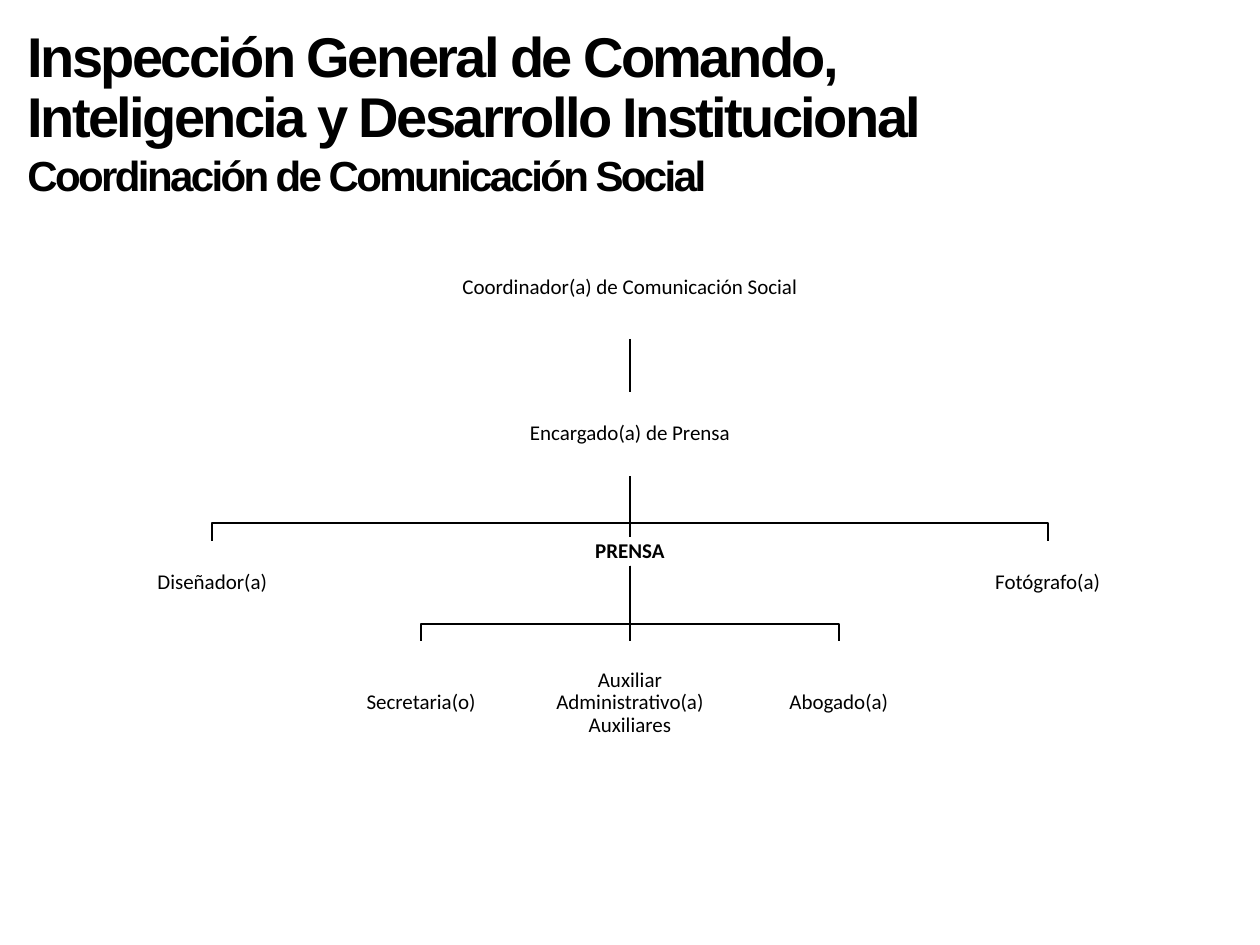
from lxml import etree
from pptx import Presentation
from pptx import util as u
from pptx.dml.color import RGBColor
from pptx.enum import shapes, text
from pptx.oxml.ns import qn

BLACK, WHITE = "000000", "FFFFFF"
TOP, BOTTOM = 0, 2
CARD_WIDTH = 1.37
ELBOW_DROP = 0.14


def color(value):
    return RGBColor.from_string(value)


def write(frame, content, size=12, font="Calibri", bold=False, align=None,
          line_spacing=0.9, tracking=None, first=True):
    para = frame.paragraphs[0] if first else frame.add_paragraph()
    para.alignment = align
    para.line_spacing = line_spacing
    span = para.add_run()
    span.text = content
    span.font.size = u.Pt(size)
    span.font.name = font
    span.font.bold = bold
    span.font.color.rgb = color(BLACK)
    if tracking is not None:
        span.font._element.set("spc", str(int(tracking * 100)))


def set_line(shape):
    shape.line.color.rgb = color(BLACK)
    shape.line.width = u.Pt(1)


def add_heading(page, left, top, width, height):
    box = page.shapes.add_textbox(*map(u.Inches, (left, top, width, height)))
    frame = box.text_frame
    frame.word_wrap = True
    frame.auto_size = text.MSO_AUTO_SIZE.SHAPE_TO_FIT_TEXT
    style = dict(font="Arial", bold=True, tracking=-1.5)
    write(frame, "Inspección General de Comando, Inteligencia y Desarrollo Institucional",
          size=32, **style)
    write(frame, "Coordinación de Comunicación Social",
          size=24, line_spacing=1.0, first=False, **style)


def add_card(page, center, top, width, height, lines, bold=False):
    card = page.shapes.add_shape(
        shapes.MSO_SHAPE.RECTANGLE,
        *map(u.Inches, (center - width / 2, top, width, height)))
    card.shadow.inherit = False
    card.fill.solid()
    card.fill.fore_color.rgb = color(WHITE)
    card.line.fill.background()
    frame = card.text_frame
    frame.word_wrap = True
    frame.vertical_anchor = text.MSO_ANCHOR.MIDDLE
    frame.margin_left = frame.margin_right = u.Inches(0.01)
    frame.margin_top = frame.margin_bottom = u.Inches(0.01)
    for index, line in enumerate(lines):
        write(frame, line, bold=bold, align=text.PP_ALIGN.CENTER, first=index == 0)
    return card


def link(page, parent, child):
    """Join bottom to top: straight when aligned, otherwise with two bends."""
    start_x, end_x = (card.left + card.width // 2 for card in (parent, child))
    start_y, end_y = parent.top + parent.height, child.top
    if start_x == end_x:
        line = page.shapes.add_connector(
            shapes.MSO_CONNECTOR.STRAIGHT, start_x, start_y, end_x, end_y)
        line.begin_connect(parent, BOTTOM)
        line.end_connect(child, TOP)
        etree.SubElement(line._element.spPr, qn("a:effectLst"))
    else:
        bend_y = end_y - u.Inches(ELBOW_DROP)
        builder = page.shapes.build_freeform(start_x, start_y)
        builder.add_line_segments(
            [(start_x, bend_y), (end_x, bend_y), (end_x, end_y)], close=False)
        line = builder.convert_to_shape()
        line.fill.background()
        line.shadow.inherit = False
    set_line(line)


def add_org_chart(page, left, top, width):
    middle = left + width / 2
    step = (width - CARD_WIDTH) / 4

    def card(column, offset, height, *lines, card_width=CARD_WIDTH, bold=False):
        return add_card(page, middle + column * step, top + offset,
                        card_width, height, lines, bold)

    coordinator = card(0, 0, 0.81, "Coordinador(a) de Comunicación Social", card_width=2.87)
    manager = card(0, 1.23, 0.67, "Encargado(a) de Prensa", card_width=2.02)
    designer = card(-2, 2.41, 0.67, "Diseñador(a)")
    press = card(0, 2.38, 0.23, "PRENSA", bold=True)
    photographer = card(2, 2.41, 0.67, "Fotógrafo(a)")
    staff = [
        card(column, 3.21, 0.98, *lines)
        for column, lines in enumerate(
            [["Secretaria(o)"], ["Auxiliar Administrativo(a)", "Auxiliares"], ["Abogado(a)"]],
            start=-1)
    ]

    reports = [(coordinator, [manager]),
               (manager, [designer, press, photographer]),
               (press, staff)]
    for parent, children in reports:
        for child in children:
            link(page, parent, child)


def main():
    deck = Presentation()
    deck.slide_width, deck.slide_height = u.Inches(10), u.Inches(7.5)
    page = deck.slides.add_slide(deck.slide_layouts[6])
    add_org_chart(page, left=1, top=1.88, width=8)
    add_heading(page, left=0.12, top=0.18, width=7.46, height=1.47)
    deck.save("out.pptx")


if __name__ == "__main__":
    main()
